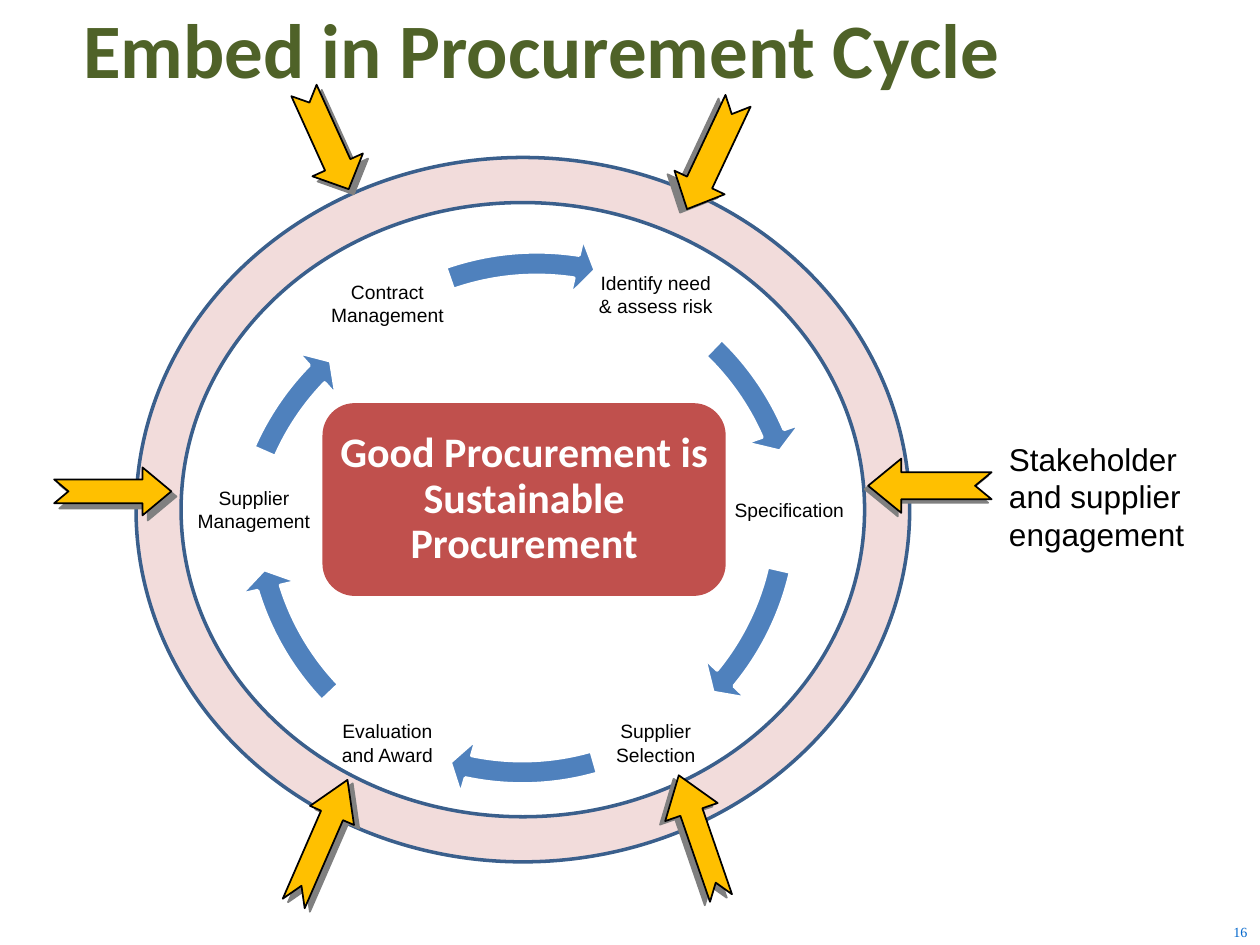
from dataclasses import dataclass
from lxml.etree import SubElement
from pptx import Presentation
from pptx.dml.color import RGBColor
from pptx.enum.shapes import MSO_SHAPE
from pptx.enum.text import MSO_ANCHOR, MSO_AUTO_SIZE, PP_ALIGN
from pptx.oxml.ns import qn
from pptx.util import Inches, Pt

Box = tuple[float, float, float, float]


@dataclass(frozen=True)
class Font:
    name: str
    size: int
    color: str
    bold: bool = False


@dataclass(frozen=True)
class Theme:
    ring: str = "F2DCDB"
    rim: str = "3A5F8C"
    cycle: str = "4F81BD"
    edge: str = "FFFFFF"
    core: str = "C0504D"
    push: str = "FFC000"
    ink: str = "000000"
    shade: str = "808080"
    title: Font = Font("Calibri", 44, "4F6228", True)
    hub: Font = Font("Calibri", 24, "FFFFFF", True)
    step: Font = Font("Arial", 11, "000000")
    note: Font = Font("Arial", 18, "000000")
    page: Font = Font("Times New Roman", 8, "0066CC")


@dataclass(frozen=True)
class Step:
    """A stage of the cycle and the curved arrow that leaves it."""
    label: str
    left: float
    top: float
    arc: Box
    end: float
    start: float


@dataclass(frozen=True)
class Push:
    """A notched arrow pressing on the ring; its shadow has a reach and an angle."""
    box: Box
    turn: float
    notch: tuple[float, float]
    reach: float
    angle: int


THEME = Theme()
SIDE = 0.95  # width and height of a step label
ARC = 4.66
WEST, EAST = 2.6, 4.73
MID, LOW = 3.57, 5.42
STEPS = [
    Step("Identify need & assess risk", EAST, 1.86, (1.88, 1.94, ARC, ARC), 202, 188.37),
    Step("Specification", 5.79, MID, (1.81, 1.72, ARC, ARC), 23.66, 7.77),
    Step("Supplier Selection", EAST, LOW, (1.84, 1.75, 4.61, 4.61), 61.11, 44.39),
    Step("Evaluation and Award", WEST, LOW, (1.81, 1.72, ARC, ARC), 97.73, 81.83),
    Step("Supplier Management", 1.54, MID, (1.69, 2.1, ARC, ARC), 134.48, 122.22),
    Step("Contract Management", WEST, 1.93, (1.93, 1.86, ARC, ARC), 167.19, 150.44),
]
# The curved arrows keep their order: each one follows its step label.
PUSHES = [
    Push((0.43, 3.71, 0.93, 0.38), 0, (0.5, 0.6), 4.2, 45),
    Push((2.16, 0.89, 0.86, 0.44), 65.6, (0.5, 0.48), 4.2, 45),
    Push((5.18, 1.01, 0.95, 0.44), 115.2, (0.5, 0.53), 4.5, 153),
    Push((6.89, 3.64, 0.98, 0.43), 180, (0.5, 0.61), 2.8, 135),
    Push((5.04, 6.42, 1.03, 0.44), 251, (0.42, 0.7), 3.6, 146),
    Push((2.01, 6.49, 1.07, 0.38), 293.5, (0.5, 0.81), 3.6, 34),
]


def place(shape, box: Box) -> None:
    for side, size in zip(("left", "top", "width", "height"), box):
        setattr(shape, side, Inches(size))


def write(shape, lines: list[str], font: Font, align=PP_ALIGN.CENTER,
          anchor=MSO_ANCHOR.MIDDLE, inset: float | None = None,
          space: float | None = None) -> None:
    frame = shape.text_frame
    frame.text = "\n".join(lines)
    looks = {"word_wrap": True, "auto_size": MSO_AUTO_SIZE.NONE,
             "vertical_anchor": anchor}
    if inset is not None:
        for side in ("left", "top", "right", "bottom"):
            looks[f"margin_{side}"] = Inches(inset)
    for key, value in looks.items():
        setattr(frame, key, value)
    for para in frame.paragraphs:
        para.alignment = align
        para.line_spacing = space
        for key, value in {"name": font.name, "size": Pt(font.size),
                           "bold": font.bold}.items():
            setattr(para.font, key, value)
        para.font.color.rgb = RGBColor.from_string(font.color)


def add_text(slide, box: Box, lines: list[str], font: Font, **looks) -> None:
    shape = slide.shapes.add_textbox(*map(Inches, box))
    write(shape, lines, font, **looks)


def add_form(slide, kind, box: Box, fill: str, line: str | None = None,
             width: float = 2, adjust: tuple = ()):
    shape = slide.shapes.add_shape(kind, *map(Inches, box))
    shape.shadow.inherit = False
    shape.fill.solid()
    shape.fill.fore_color.rgb = RGBColor.from_string(fill)
    if line:
        shape.line.color.rgb = RGBColor.from_string(line)
        shape.line.width = Pt(width)
    else:
        shape.line.fill.background()
    for index, value in enumerate(adjust):
        shape.adjustments[index] = value
    return shape


def add_step(slide, step: Step) -> None:
    add_text(slide, (step.left, step.top, SIDE, SIDE), [step.label],
             THEME.step, inset=0.02)
    add_form(slide, MSO_SHAPE.CIRCULAR_ARROW, step.arc, THEME.cycle, THEME.edge,
             adjust=(0.04, 2.5, step.end, step.start, 0.05))


def add_push(slide, push: Push) -> None:
    shape = add_form(slide, MSO_SHAPE.NOTCHED_RIGHT_ARROW, push.box, THEME.push,
                     THEME.ink, 1, push.notch)
    shape.rotation = push.turn
    effects = shape._element.spPr.find(qn("a:effectLst"))
    cast = SubElement(effects, qn("a:outerShdw"), blurRad="0",
                      dist=str(Pt(push.reach)), dir=str(push.angle * 60000),
                      algn="ctr", rotWithShape="0")
    SubElement(cast, qn("a:srgbClr"), val=THEME.shade)


def main() -> None:
    deck = Presentation()
    deck.slide_width, deck.slide_height = Inches(10), Inches(7.5)
    slide = deck.slides.add_slide(deck.slide_layouts[5])

    title = slide.shapes.title
    place(title, (-0.2, 0, 9, 0.76))
    write(title, ["Embed in Procurement Cycle"], THEME.title)
    add_text(slide, (8.07, 7.29, 1.93, 0.21), ["16"], THEME.page,
             align=PP_ALIGN.RIGHT)

    add_form(slide, MSO_SHAPE.DONUT, (1.08, 1.25, 6.14, 5.59), THEME.ring,
             THEME.rim, adjust=(0.064,))
    for step in STEPS:
        add_step(slide, step)
    hub = add_form(slide, MSO_SHAPE.ROUNDED_RECTANGLE, (2.56, 3.2, 3.2, 1.53),
                   THEME.core)
    write(hub, ["Good Procurement is Sustainable Procurement"], THEME.hub,
          inset=0.06, space=0.9)
    for push in PUSHES:
        add_push(slide, push)
    add_text(slide, (7.91, 3.44, 2.26, 1.01),
             ["Stakeholder", "and supplier engagement"], THEME.note,
             align=PP_ALIGN.LEFT, anchor=MSO_ANCHOR.TOP)
    deck.save("out.pptx")


if __name__ == "__main__":
    main()
